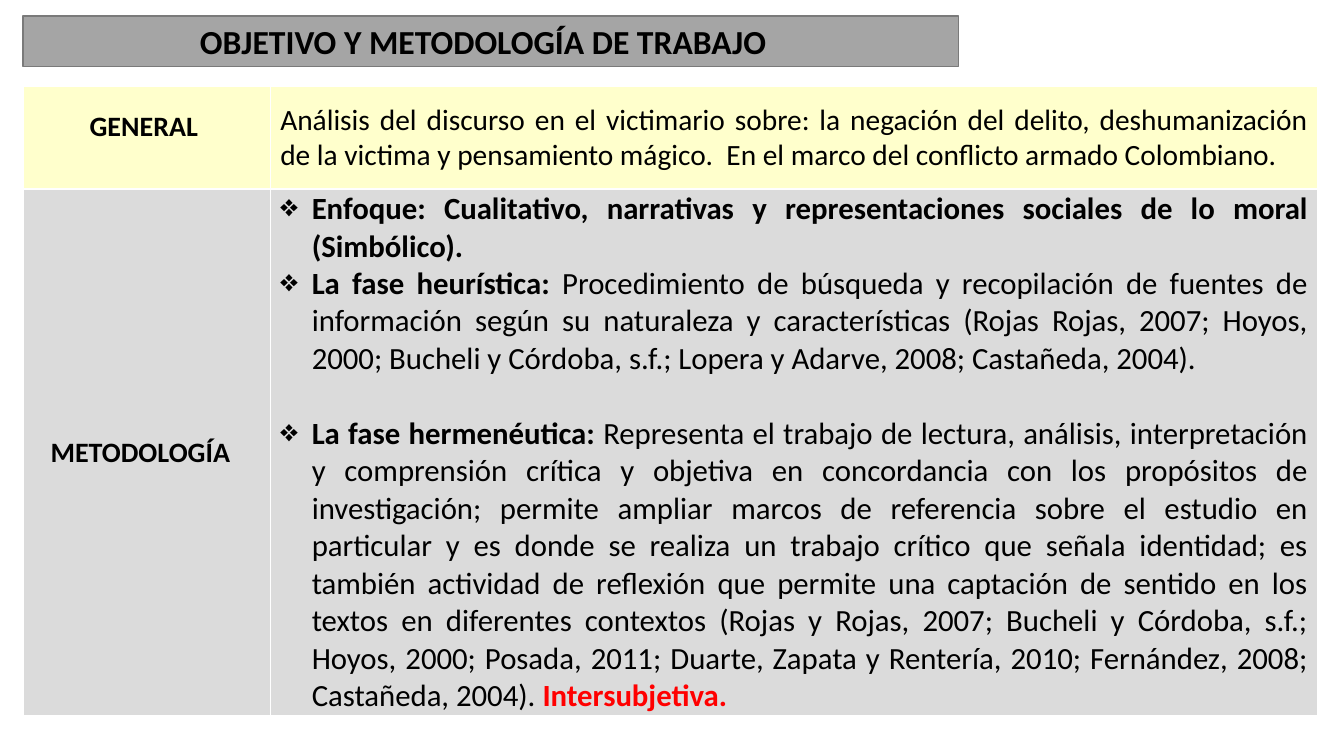
"""Build the slide on the goal and method of the work."""
from lxml import etree
from pptx import Presentation
from pptx.dml.color import RGBColor
from pptx.enum.shapes import MSO_SHAPE
from pptx.enum.text import MSO_ANCHOR, PP_ALIGN
from pptx.oxml.ns import qn
from pptx.util import Pt

RECT = MSO_SHAPE.RECTANGLE
MIDDLE = MSO_ANCHOR.MIDDLE
CENTER = PP_ALIGN.CENTER
JUSTIFY = PP_ALIGN.JUSTIFY
BLACK = RGBColor(0, 0, 0)
RED = RGBColor(0xFF, 0, 0)
GRAY = RGBColor(0xA5, 0xA5, 0xA5)
EDGE = RGBColor(0x7A, 0x7A, 0x7A)
CREAM = RGBColor(0xFF, 0xFF, 0xCC)
SILVER = RGBColor(0xDB, 0xDB, 0xDB)
WHITE = RGBColor(0xFF, 0xFF, 0xFF)
LEFT = Pt(16.5)
INDENT = Pt(22.5)

GOAL = (
    "Análisis del discurso en el victimario sobre: la negación del delito, "
    "deshumanización de la victima y pensamiento mágico.  En el marco del "
    "conflicto armado Colombiano."
)
SEARCH = (
    "Procedimiento de búsqueda y recopilación de fuentes de información según "
    "su naturaleza y características (Rojas Rojas, 2007; Hoyos, 2000; Bucheli "
    "y Córdoba, s.f.; Lopera y Adarve, 2008; Castañeda, 2004)."
)
READING = (
    "Representa el trabajo de lectura, análisis, interpretación y comprensión "
    "crítica y objetiva en concordancia con los propósitos de investigación; "
    "permite ampliar marcos de referencia sobre el estudio en particular y es "
    "donde se realiza un trabajo crítico que señala identidad; es también "
    "actividad de reflexión que permite una captación de sentido en los textos "
    "en diferentes contextos (Rojas y Rojas, 2007; Bucheli y Córdoba, s.f.; "
    "Hoyos, 2000; Posada, 2011; Duarte, Zapata y Rentería, 2010; Fernández, "
    "2008; Castañeda, 2004). "
)
PHASES = [
    (0, [("Enfoque: Cualitativo, narrativas y representaciones sociales de lo "
          "moral (Simbólico).", True, BLACK)]),
    (0, [("La fase heurística: ", True, BLACK), (SEARCH, False, BLACK)]),
    (26.8, [("La fase hermenéutica: ", True, BLACK), (READING, False, BLACK),
            ("Intersubjetiva.", True, RED)]),
]


def add_run(para, text, size, bold, color=BLACK):
    run = para.add_run()
    run.text = text
    font = run.font
    font.name = "Calibri"
    font.size = Pt(size)
    font.bold = bold
    font.color.rgb = color


def style_cell(cell, fill):
    props = cell._tc.get_or_add_tcPr()
    for side in ("lnL", "lnR", "lnT", "lnB"):
        line = etree.SubElement(props, qn(f"a:{side}"), w=str(Pt(1)))
        solid = etree.SubElement(line, qn("a:solidFill"))
        etree.SubElement(solid, qn("a:srgbClr"), val=str(WHITE))
    cell.fill.solid()
    cell.fill.fore_color.rgb = fill
    cell.vertical_anchor = MIDDLE


deck = Presentation()
deck.slide_width = Pt(960)
deck.slide_height = Pt(540)
slide = deck.slides.add_slide(deck.slide_layouts[6])

title = slide.shapes.add_shape(RECT, LEFT, Pt(11.5), Pt(668), Pt(36))
title.shadow.inherit = False
title.fill.solid()
title.fill.fore_color.rgb = GRAY
title.line.color.rgb = EDGE
title.line.width = Pt(1)
frame = title.text_frame
frame.word_wrap = True
frame.vertical_anchor = MIDDLE
frame.margin_right = Pt(18)
frame.paragraphs[0].alignment = CENTER
add_run(frame.paragraphs[0], "OBJETIVO Y METODOLOGÍA DE TRABAJO", 24, True)

table = slide.shapes.add_table(2, 2, LEFT, Pt(62), Pt(925), Pt(449.5)).table
for col, width in zip(table.columns, (176.5, 748.5)):
    col.width = Pt(width)
for row, height in zip(table.rows, (73, 376.5)):
    row.height = Pt(height)
for row, fill in zip(table.rows, (CREAM, SILVER)):
    for cell in row.cells:
        style_cell(cell, fill)

labels = [("GENERAL", 11.2, 19.5), ("METODOLOGÍA", 16.2, 3.6)]
for num, (label, right, bottom) in enumerate(labels):
    cell = table.cell(num, 0)
    cell.margin_right = Pt(right)
    cell.margin_bottom = Pt(bottom)
    para = cell.text_frame.paragraphs[0]
    para.alignment = CENTER
    add_run(para, label, 20, True)

para = table.cell(0, 1).text_frame.paragraphs[0]
para.alignment = JUSTIFY
add_run(para, GOAL, 21, False)

cell = table.cell(1, 1)
cell.margin_top = cell.margin_bottom = Pt(0)
frame = cell.text_frame
for num, (gap, parts) in enumerate(PHASES):
    para = frame.add_paragraph() if num else frame.paragraphs[0]
    para.alignment = JUSTIFY
    if gap:
        para.space_before = Pt(gap)
    props = para._p.get_or_add_pPr()
    props.set("marL", str(INDENT))
    props.set("indent", str(-INDENT))
    etree.SubElement(props, qn("a:buChar"), char="❖")
    for text, bold, color in parts:
        add_run(para, text, 22, bold, color)

deck.save("out.pptx")
